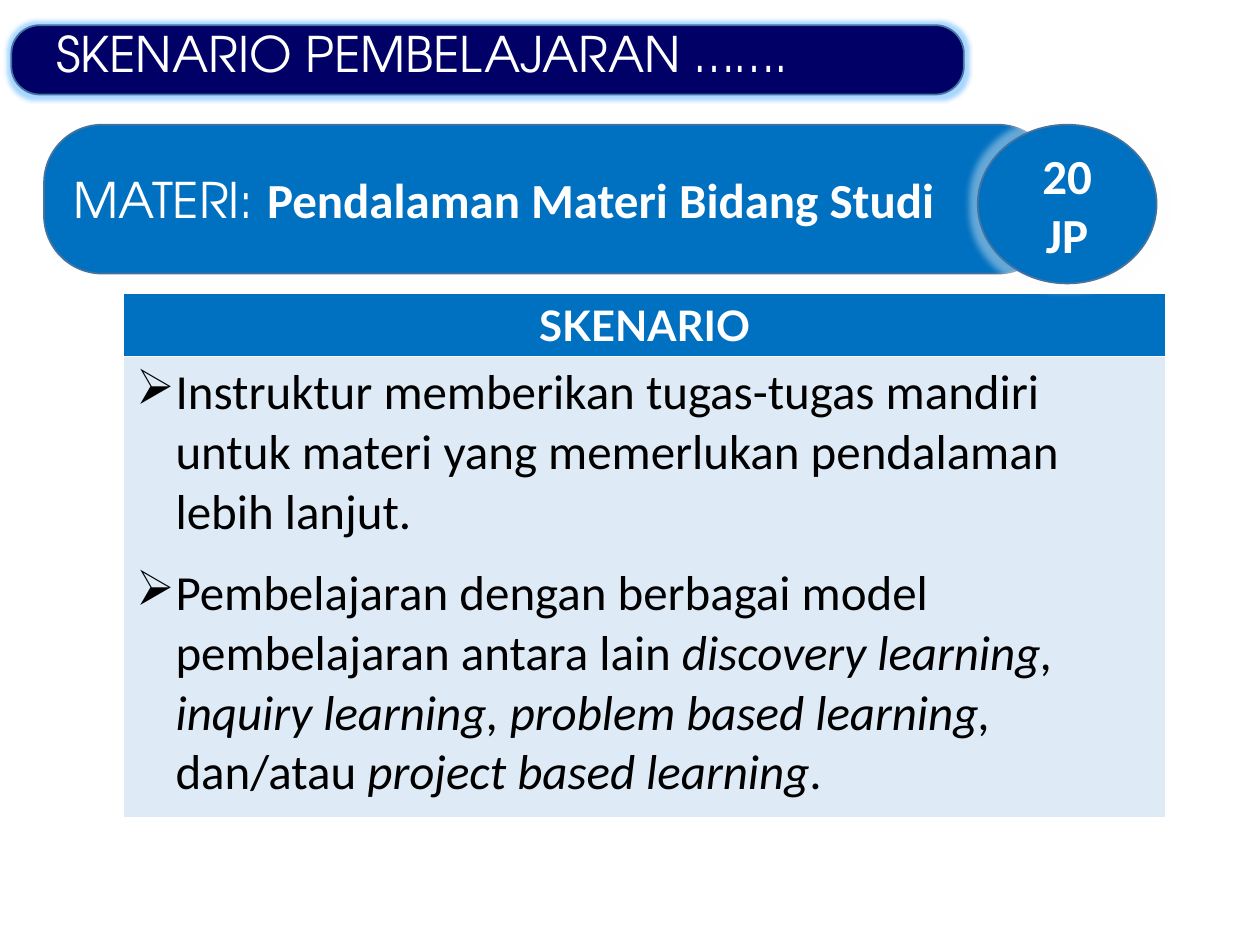
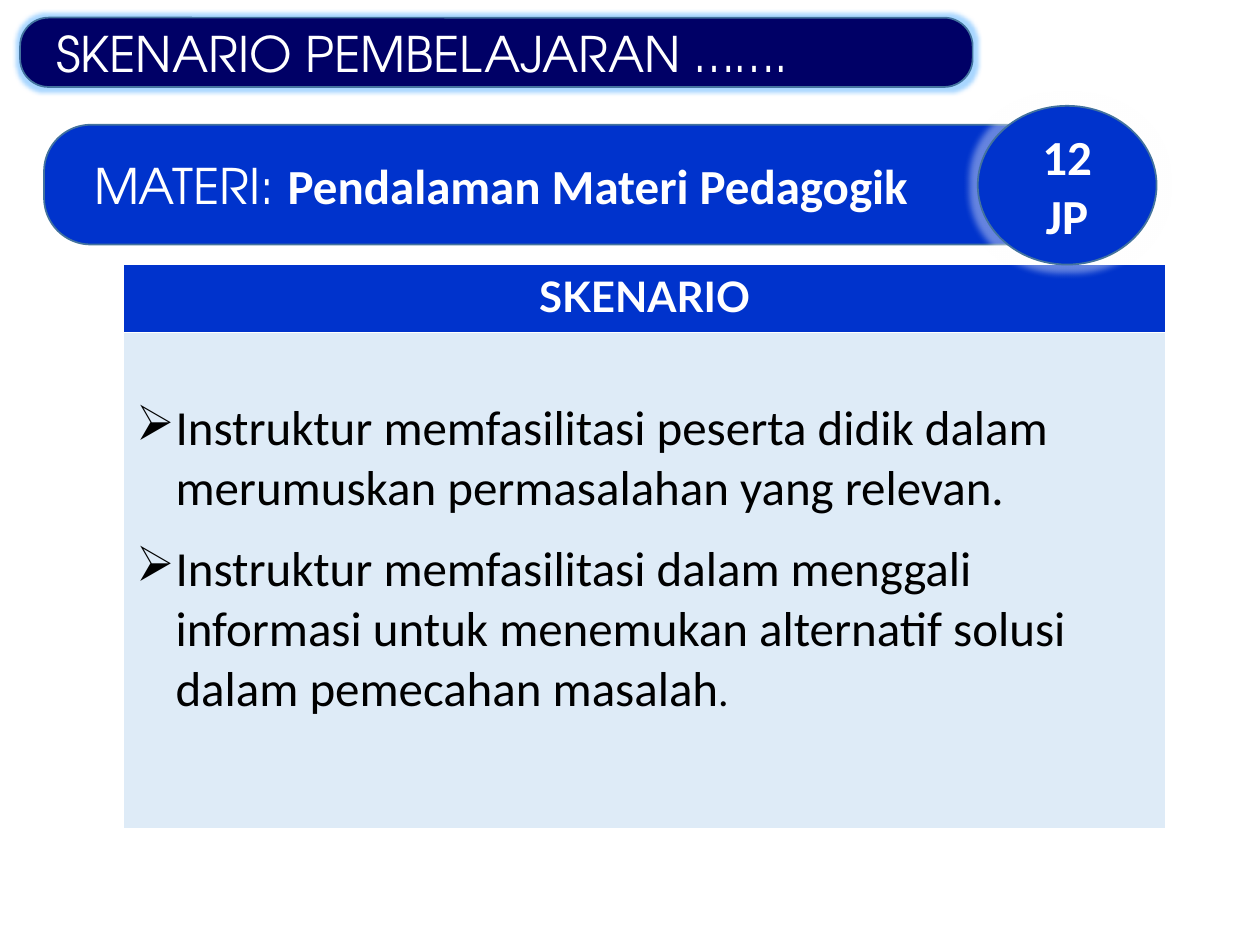
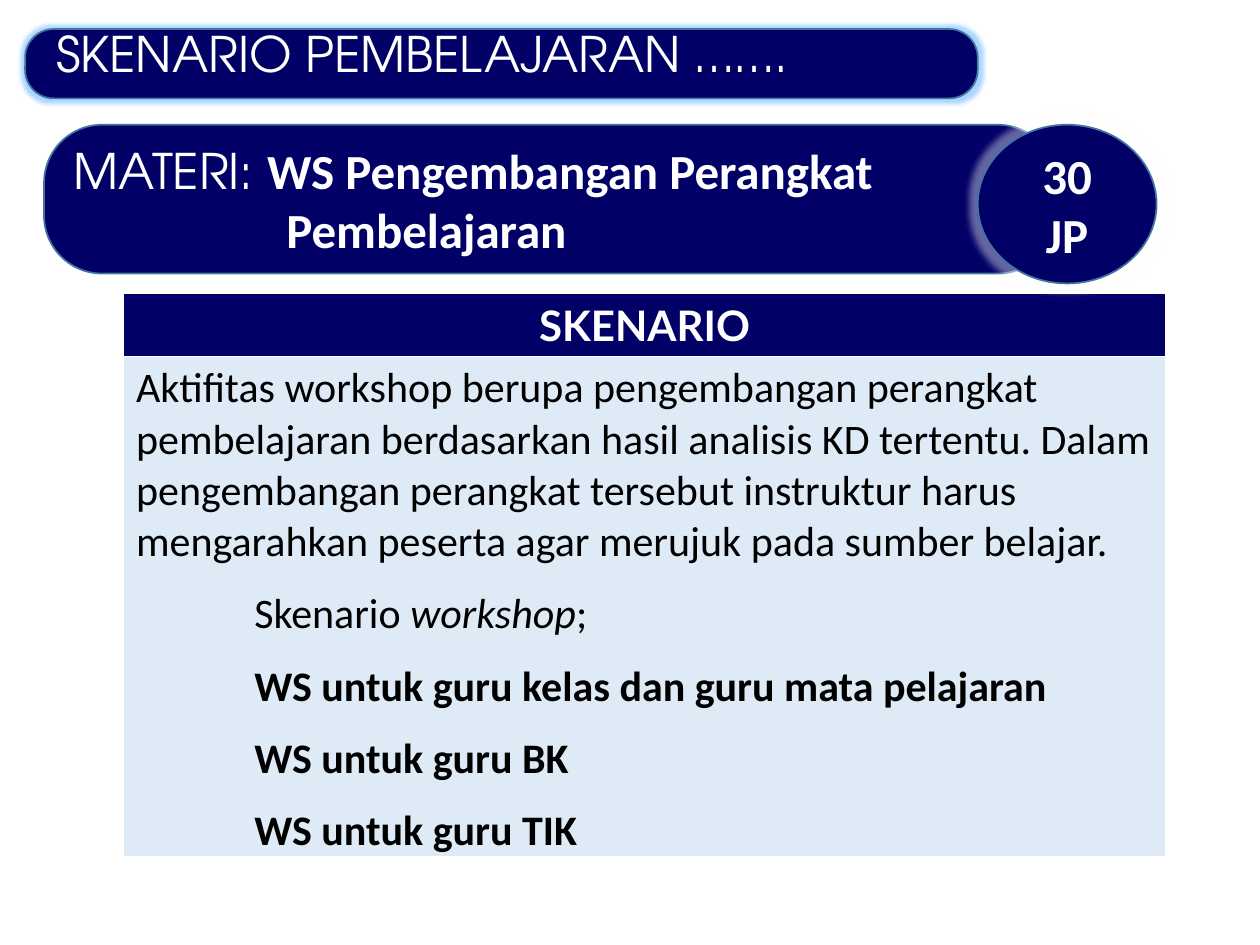
from lxml import etree
from pptx import Presentation
from pptx.dml.color import RGBColor
from pptx.enum import shapes, text
from pptx.oxml import ns
from pptx.util import Pt

WHITE = RGBColor(0xFF, 0xFF, 0xFF)
BLACK = RGBColor(0x00, 0x00, 0x00)
NAVY = RGBColor(0x00, 0x00, 0x66)
ROYAL = RGBColor(0x00, 0x33, 0xCC)
AZURE = RGBColor(0x00, 0x70, 0xC0)
PALE = RGBColor(0xDE, 0xEB, 0xF7)
OUTLINE = RGBColor(0x43, 0x73, 0x9E)
TITLE_GLOW = RGBColor(0x26, 0x99, 0xFF)

DISPLAY, BODY, HEADING = "TeX Gyre Adventor", "Calibri", "Lato"
TITLE = "SKENARIO PEMBELAJARAN ……."
BULLET = "➢"
ITALIC, BOLD = "italic", "bold"
TABLE_LEFT, TABLE_WIDTH = 70.6, 595.4


def style(paragraph, size, color, name=None, bold=None):
    font = paragraph.font
    font.size, font.name, font.bold = Pt(size), name, bold
    font.color.rgb = color


def indent(paragraph, left, first):
    properties = paragraph._p.get_or_add_pPr()
    properties.set("marL", str(Pt(left)))
    properties.set("indent", str(Pt(first)))
    return properties


def add_glow(shape, color, radius):
    effects = shape._element.spPr.find(ns.qn("a:effectLst"))
    glow = etree.SubElement(effects, ns.qn("a:glow"), rad=str(Pt(radius)))
    tint = etree.SubElement(glow, ns.qn("a:srgbClr"), val=str(color))
    etree.SubElement(tint, ns.qn("a:alpha"), val="40000")


def add_panel(slide, preset, box, fill, corner=None):
    panel = slide.shapes.add_shape(preset, *map(Pt, box))
    panel.shadow.inherit = False
    panel.fill.solid()
    panel.fill.fore_color.rgb = fill
    panel.line.color.rgb = OUTLINE
    panel.line.width = Pt(1)
    if corner is not None:
        panel.adjustments[0] = corner
    panel.text_frame.word_wrap = True
    return panel


def add_title(slide, left, top):
    bar = add_panel(slide, shapes.MSO_SHAPE.ROUNDED_RECTANGLE,
                    (left, top, 544.3, 39.6), NAVY, 0.41)
    add_glow(bar, TITLE_GLOW, 5)
    frame = slide.shapes.add_textbox(Pt(25.2), Pt(10.1), Pt(521.3), Pt(41)).text_frame
    frame.word_wrap = True
    frame.text = TITLE
    style(frame.paragraphs[0], 28, WHITE, DISPLAY)


def add_topic(slide, box, color, topic, hanging, hours, badge_rise):
    """Banner naming the topic, with its lesson hours in an oval at the right end."""
    left, top = box[:2]
    banner = add_panel(slide, shapes.MSO_SHAPE.ROUNDED_RECTANGLE, box, color, 0.39)
    banner.text_frame.vertical_anchor = text.MSO_ANCHOR.MIDDLE
    paragraph = banner.text_frame.paragraphs[0]
    paragraph.alignment = text.PP_ALIGN.LEFT
    indent(paragraph, 121.7, -hanging)
    style(paragraph, 28, WHITE)
    label, name = paragraph.add_run(), paragraph.add_run()
    label.text, name.text = "MATERI: ", topic
    label.font.name, name.font.name = DISPLAY, BODY
    name.font.bold = True

    badge = add_panel(slide, shapes.MSO_SHAPE.OVAL,
                      (left + 533.5, top - badge_rise, 102.2, 90.7), color)
    add_glow(badge, WHITE, 8)
    badge.text_frame.vertical_anchor = text.MSO_ANCHOR.MIDDLE
    badge.text_frame.text = hours
    paragraph = badge.text_frame.paragraphs[0]
    paragraph.alignment = text.PP_ALIGN.CENTER
    style(paragraph, 28, WHITE, BODY, True)


def add_scenario(slide, top, row_heights, color, size, paragraphs, margin_top=3.6):
    """Table with one heading and one body cell; a paragraph is (kind, runs)."""
    table = slide.shapes.add_table(2, 1, Pt(TABLE_LEFT), Pt(top), Pt(TABLE_WIDTH),
                                   Pt(sum(row_heights))).table
    table.horz_banding = False
    for row, height, fill in zip(table.rows, row_heights, (color, PALE)):
        row.height = Pt(height)
        row.cells[0].fill.solid()
        row.cells[0].fill.fore_color.rgb = fill

    heading, body = table.cell(0, 0), table.cell(1, 0)
    heading.text = "SKENARIO"
    paragraph = heading.text_frame.paragraphs[0]
    paragraph.alignment = text.PP_ALIGN.CENTER
    style(paragraph, 24, WHITE, HEADING, True)

    body.margin_top = Pt(margin_top)
    frame = body.text_frame
    for number, (kind, runs) in enumerate(paragraphs):
        paragraph = frame.add_paragraph() if number else frame.paragraphs[0]
        paragraph.space_before = paragraph.space_after = Pt(6)
        if kind == "bullet":
            properties = indent(paragraph, 22.5, -22.5)
            etree.SubElement(properties, ns.qn("a:buChar"), char=BULLET)
        elif kind == "inset":
            indent(paragraph, 67.5, 0)
        style(paragraph, size, BLACK, BODY)
        for wording, *emphasis in runs:
            run = paragraph.add_run()
            run.text = wording
            for trait in emphasis:
                if trait in (ITALIC, BOLD):
                    setattr(run.font, trait, True)
                else:
                    run.font.size = Pt(trait)


SLIDES = [
    dict(
        title=(6.5, 14.4),
        topic=dict(box=(25.2, 71.3, 578.2, 85), color=AZURE, hanging=121.7,
                   topic="Pendalaman Materi Bidang Studi", hours="20 JP", badge_rise=0),
        scenario=dict(top=167.8, row_heights=(36, 263.5), color=AZURE, size=28, paragraphs=[
            ("bullet", [("Instruktur memberikan tugas-tugas mandiri untuk materi yang "
                         "memerlukan pendalaman lebih lanjut.",)]),
            ("bullet", [("Pembelajaran dengan berbagai model pembelajaran antara lain ",),
                        ("discovery learning, inquiry learning, problem based learning, ",
                         ITALIC),
                        ("dan/atau",), (" project based learning", ITALIC), (".",)]),
        ])),
    dict(
        title=(11.5, 10.1),
        topic=dict(box=(25.2, 71.3, 578.2, 68.4), color=ROYAL, hanging=108,
                   topic="Pendalaman Materi Pedagogik", hours="12 JP", badge_rise=10.8),
        scenario=dict(top=151.2, row_heights=(38.9, 283.7), color=ROYAL, size=28,
                      margin_top=38, paragraphs=[
            ("bullet", [("Instruktur memfasilitasi peserta didik dalam merumuskan "
                         "permasalahan yang relevan.",)]),
            ("bullet", [("Instruktur memfasilitasi dalam menggali informasi untuk menemukan "
                         "alternatif solusi dalam pemecahan masalah",), (".", 24)]),
        ])),
    dict(
        title=(14.4, 16.6),
        topic=dict(box=(25.2, 71.3, 578.2, 85), color=NAVY, hanging=121.7,
                   topic="WS Pengembangan Perangkat Pembelajaran", hours="30 JP",
                   badge_rise=0),
        scenario=dict(top=167.8, row_heights=(36, 285.8), color=NAVY, size=24, paragraphs=[
            ("plain", [("Aktifitas workshop berupa pengembangan perangkat pembelajaran "
                        "berdasarkan hasil analisis KD tertentu. Dalam pengembangan perangkat "
                        "tersebut instruktur harus mengarahkan peserta agar merujuk pada "
                        "sumber belajar.",)]),
            ("inset", [("Skenario ",), ("workshop", ITALIC), (";",)]),
            ("inset", [("WS untuk guru kelas dan guru mata pelajaran", BOLD)]),
            ("inset", [("WS untuk guru BK", BOLD)]),
            ("inset", [("WS untuk guru TIK", BOLD)]),
        ])),
]


def main():
    deck = Presentation()
    deck.slide_width, deck.slide_height = Pt(720), Pt(540)
    for content in SLIDES:
        slide = deck.slides.add_slide(deck.slide_layouts[6])
        add_scenario(slide, **content["scenario"])
        add_title(slide, *content["title"])
        add_topic(slide, **content["topic"])
    deck.save("out.pptx")


if __name__ == "__main__":
    main()
